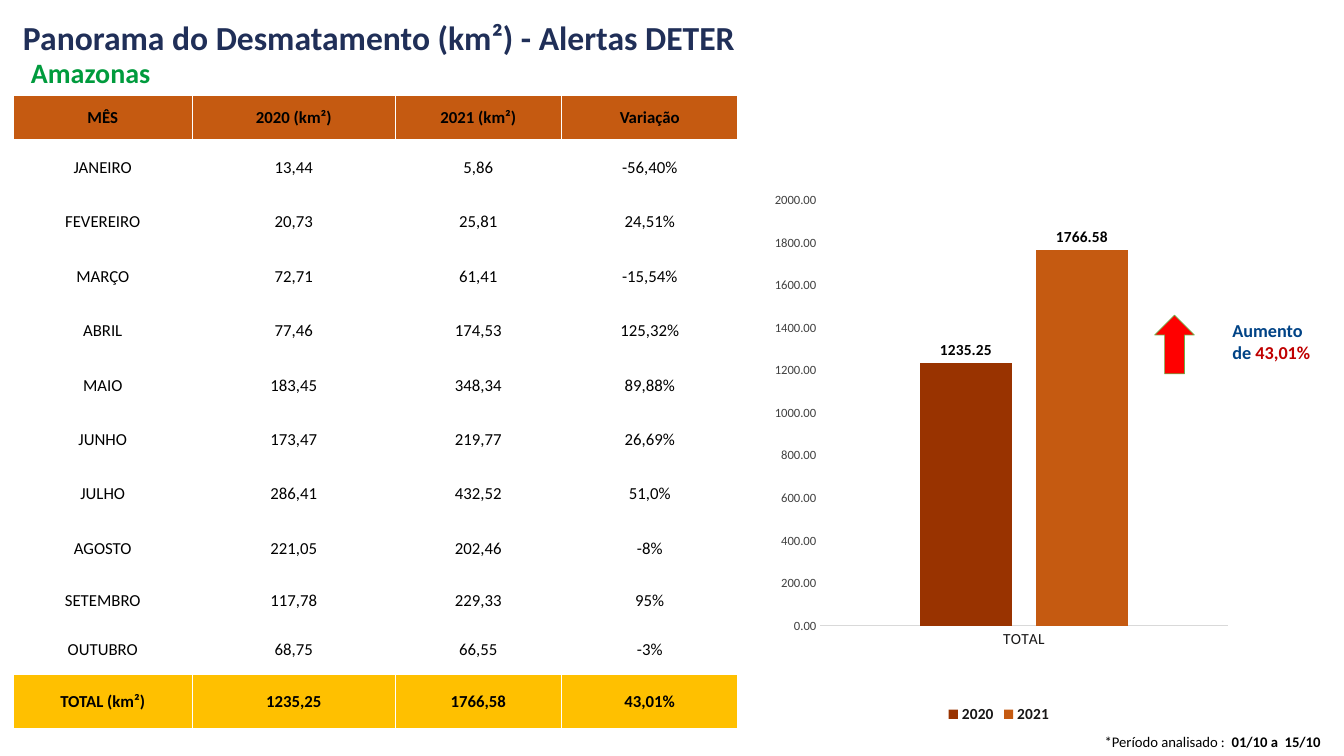
from lxml.etree import SubElement as Sub
from pptx import Presentation
from pptx.chart.data import CategoryChartData as ChartData
from pptx.dml.color import RGBColor
from pptx.enum.chart import XL_CHART_TYPE as Kind, XL_LABEL_POSITION as Spot
from pptx.enum.chart import XL_LEGEND_POSITION as Side, XL_TICK_MARK as Tick
from pptx.enum.shapes import MSO_SHAPE as Form
from pptx.enum.text import MSO_ANCHOR as Anchor, MSO_AUTO_SIZE as Fit, PP_ALIGN as Align
from pptx.oxml import parse_xml
from pptx.oxml.ns import nsdecls, qn
from pptx.util import Cm, Pt

BLACK = RGBColor(0x00, 0x00, 0x00)
WHITE = RGBColor(0xFF, 0xFF, 0xFF)
NAVY = RGBColor(0x20, 0x2F, 0x58)
BLUE = RGBColor(0x00, 0x43, 0x86)
GREEN = RGBColor(0x00, 0x9B, 0x3D)
LEAF = RGBColor(0x70, 0xAD, 0x47)
RED = RGBColor(0xFF, 0x00, 0x00)
WINE = RGBColor(0xC0, 0x00, 0x00)
BROWN = RGBColor(0x99, 0x33, 0x00)
RUST = RGBColor(0xC5, 0x5A, 0x11)
GOLD = RGBColor(0xFF, 0xC0, 0x00)
INK = RGBColor(0x18, 0x17, 0x17)
GRAY = RGBColor(0x40, 0x40, 0x40)
PALE = RGBColor(0xD9, 0xD9, 0xD9)

MONTHS = [
    ("JANEIRO", "13,44", "5,86", "-56,40%"),
    ("FEVEREIRO", "20,73", "25,81", "24,51%"),
    ("MARÇO", "72,71", "61,41", "-15,54%"),
    ("ABRIL", "77,46", "174,53", "125,32%"),
    ("MAIO", "183,45", "348,34", "89,88%"),
    ("JUNHO", "173,47", "219,77", "26,69%"),
    ("JULHO", "286,41", "432,52", "51,0%"),
    ("AGOSTO", "221,05", "202,46", "-8%"),
    ("SETEMBRO", "117,78", "229,33", "95%"),
    ("OUTUBRO", "68,75", "66,55", "-3%"),
]
HEAD = ("MÊS", "2020 (km²)", "2021 (km²)", "Variação")
TOTAL = ("TOTAL (km²)", "1235,25", "1766,58", "43,01%")
WIDTHS = (4.52, 5.11, 4.19, 4.45)
HEIGHTS = [1.13] + [1.37] * 8 + [1.25] * 2 + [1.37]
BARS = [("2020", 1235.25, BROWN), ("2021", 1766.58, RUST)]


def box(*sides):
    return [Cm(side) for side in sides]


def style(font, size, color, bold=False):
    font.name = "Calibri"
    font.size = Pt(size)
    font.color.rgb = color
    font.bold = bold


def write(para, text, size=12, color=BLACK, bold=False, align=Align.LEFT):
    para.alignment = align
    run = para.add_run()
    run.text = text
    style(run.font, size, color, bold)


class Page:
    def __init__(self, deck):
        self.slide = deck.slides.add_slide(deck.slide_layouts[6])
        self.shapes = self.slide.shapes

    def text(self, place, *lines, **form):
        frame = self.shapes.add_textbox(*box(*place)).text_frame
        frame.word_wrap = True
        frame.auto_size = Fit.SHAPE_TO_FIT_TEXT
        for n, line in enumerate(lines):
            para = frame.add_paragraph() if n else frame.paragraphs[0]
            for words, extra in line:
                write(para, words, **{**form, **extra})

    def cell(self, cell, text, fill, bold):
        cell.margin_left = cell.margin_right = cell.margin_top = Cm(0.03)
        cell.margin_bottom = 0
        cell.vertical_anchor = Anchor.MIDDLE
        props = cell._tc.get_or_add_tcPr()
        for side in "LRTB":
            edge = Sub(props, qn(f"a:ln{side}"), w=str(Pt(1)))
            paint = Sub(edge, qn("a:solidFill"))
            Sub(paint, qn("a:srgbClr"), val=str(WHITE))
        cell.fill.solid()
        cell.fill.fore_color.rgb = fill
        write(cell.text_frame.paragraphs[0], text, bold=bold, align=Align.CENTER)

    def table(self, place, rows, fills):
        grid = self.shapes.add_table(len(rows), len(WIDTHS), *box(*place)).table
        for col, width in zip(grid.columns, WIDTHS):
            col.width = Cm(width)
        for r, (row, fill) in enumerate(zip(rows, fills)):
            grid.rows[r].height = Cm(HEIGHTS[r])
            for c, text in enumerate(row):
                self.cell(grid.cell(r, c), text, fill, fill != WHITE)

    def arrow(self, place):
        shape = self.shapes.add_shape(Form.DOWN_ARROW, *box(*place))
        shape.rotation = 180
        shape.shadow.inherit = False
        shape.fill.solid()
        shape.fill.fore_color.rgb = RED
        shape.line.color.rgb = LEAF
        shape.line.width = Pt(0.5)

    def chart(self, place, bars):
        data = ChartData(number_format="0.00")
        data.categories = ["TOTAL"]
        for name, value, _ in bars:
            data.add_series(name, [value])
        chart = self.shapes.add_chart(Kind.COLUMN_CLUSTERED, *box(*place), data).chart
        style(chart.font, 10, GRAY)
        chart.has_title = False
        chart.has_legend = True
        chart.legend.position = Side.BOTTOM
        chart.legend.include_in_layout = False
        style(chart.legend.font, 11, INK, True)
        plot = chart.plots[0]
        plot.gap_width, plot.overlap = 219, -27
        plot.vary_by_categories = False
        for series, (_, _, color) in zip(plot.series, bars):
            series.format.fill.solid()
            series.format.fill.fore_color.rgb = color
            labels = series.data_labels
            labels.show_value = True
            labels.position = Spot.OUTSIDE_END
            labels.number_format = "0.00"
            labels.number_format_is_linked = False
            style(labels.font, 11, BLACK, True)
        self.axes(chart)
        self.layout(chart, x=0.118, y=0.047, w=0.871, h=0.769)

    def axes(self, chart):
        base, scale = chart.category_axis, chart.value_axis
        for axis, size, color in ((base, 11, INK), (scale, 9, GRAY)):
            axis.major_tick_mark = axis.minor_tick_mark = Tick.NONE
            axis.has_major_gridlines = False
            style(axis.tick_labels.font, size, color)
        base.format.line.color.rgb = PALE
        base.format.line.width = Pt(0.75)
        scale.format.line.fill.background()
        scale.minimum_scale, scale.maximum_scale, scale.major_unit = 0, 2000, 200
        scale.tick_labels.number_format = "0.00"
        scale.tick_labels.number_format_is_linked = False

    def layout(self, chart, **part):
        area = chart._chartSpace.chart.plotArea
        for old in area.findall(qn("c:layout")):
            area.remove(old)
        node = parse_xml(f"<c:layout {nsdecls('c')}/>")
        area.insert(0, node)
        manual = Sub(node, qn("c:manualLayout"))
        Sub(manual, qn("c:layoutTarget"), val="inner")
        for key in "xy":
            Sub(manual, qn(f"c:{key}Mode"), val="edge")
        for key, value in part.items():
            Sub(manual, qn(f"c:{key}"), val=str(value))


def main():
    deck = Presentation()
    deck.slide_width, deck.slide_height = box(33.87, 19.05)
    page = Page(deck)
    page.text((0.33, 0.3, 21.39, 1.28),
              [("Panorama do Desmatamento (km²) - Alertas DETER", {})],
              size=24, color=NAVY, bold=True)
    page.text((0.53, 1.28, 4.09, 1.11), [("Amazonas", {})],
              size=20, color=GREEN, bold=True)
    page.table((0.33, 2.4, sum(WIDTHS), sum(HEIGHTS)), [HEAD, *MONTHS, TOTAL],
               [RUST] + [WHITE] * len(MONTHS) + [GOLD])
    page.text((27.36, 18.34, 6.17, 0.71),
              [("*Período analisado :  ", {}), ("01/10 a  15/10", {"bold": True})],
              size=10.5, align=Align.RIGHT)
    page.arrow((29.1, 7.94, 1, 1.48))
    page.text((30.81, 7.92, 2.72, 1.38), [("Aumento", {})],
              [("de ", {}), ("43,01%", {"color": WINE})],
              size=13, color=BLUE, bold=True)
    page.chart((19.28, 4.4, 11.79, 13.94), BARS)
    deck.save("out.pptx")


if __name__ == "__main__":
    main()
